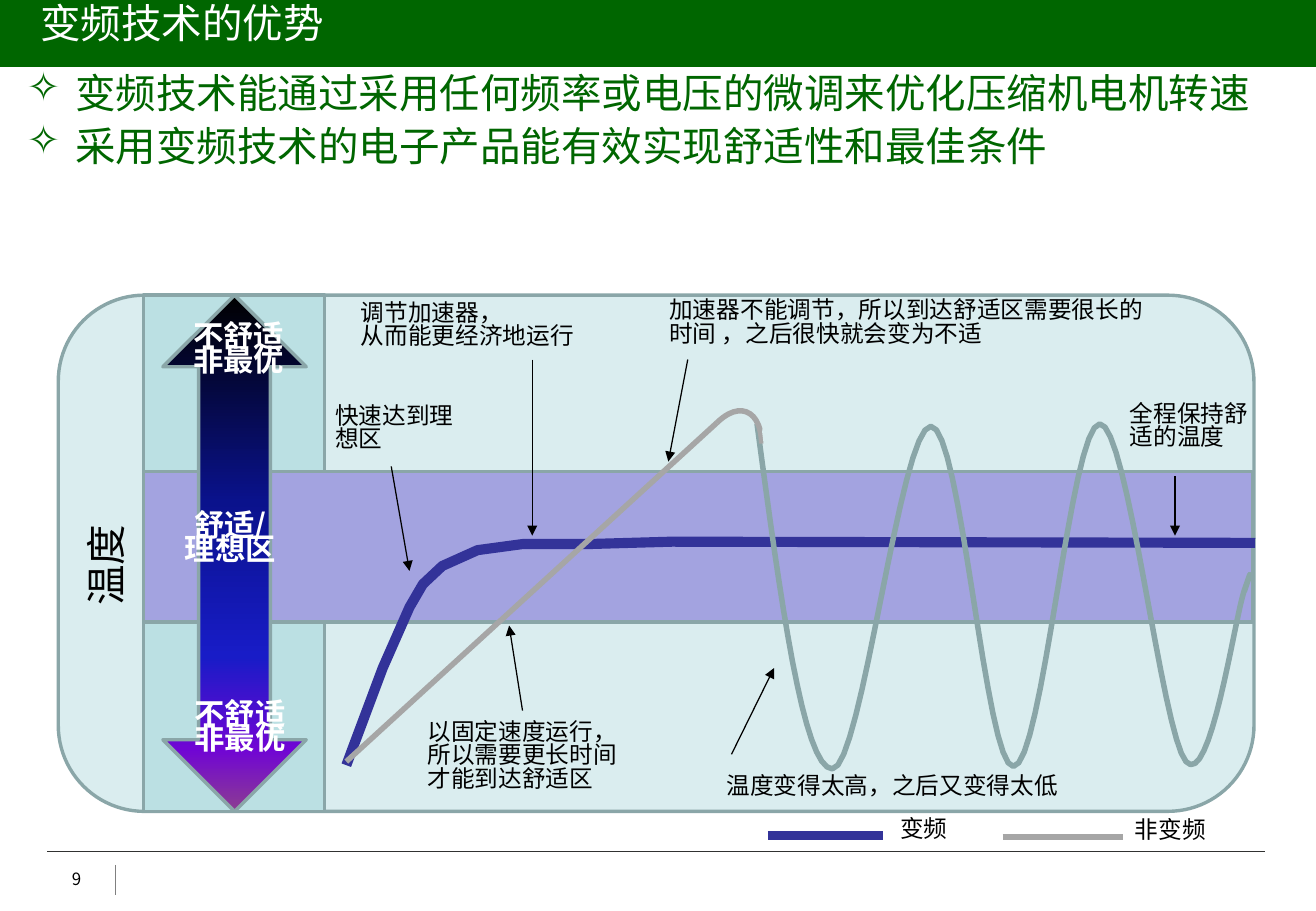
"""Build the slide on the advantages of variable-frequency technology."""
from dataclasses import dataclass

from lxml import etree
from pptx import Presentation
from pptx.dml.color import RGBColor
from pptx.enum.shapes import MSO_CONNECTOR, MSO_SHAPE
from pptx.enum.text import MSO_ANCHOR, PP_ALIGN
from pptx.oxml.ns import qn
from pptx.util import Inches, Pt

STRAIGHT = MSO_CONNECTOR.STRAIGHT
RECT, ROUNDED = MSO_SHAPE.RECTANGLE, MSO_SHAPE.ROUNDED_RECTANGLE
DOUBLE_ARROW, ARC = MSO_SHAPE.UP_DOWN_ARROW, MSO_SHAPE.ARC
PATCH = MSO_SHAPE.FLOWCHART_ALTERNATE_PROCESS
TOP, MIDDLE = MSO_ANCHOR.TOP, MSO_ANCHOR.MIDDLE
LEFT, CENTER = PP_ALIGN.LEFT, PP_ALIGN.CENTER


@dataclass(frozen=True)
class Theme:
    font: str = "Noto Sans CJK SC"
    number_font: str = "Noto Sans CJK JP"
    green: str = "006600"
    white: str = "FFFFFF"
    black: str = "000000"
    rule: str = "313231"
    divider: str = "808080"
    panel: str = "DAEDEF"
    column: str = "BBE0E3"
    comfort: str = "A3A3E0"
    outline: str = "8AA6A8"
    inverter: str = "333399"
    fixed: str = "A6A6A6"
    gradient: tuple = ((0, "000000"), (40, "0A128C"), (70, "181CC7"),
                       (88, "7005D4"), (100, "8C3D91"))
    heading: int = 24
    zone: int = 18
    note: int = 14
    number: int = 10
    spacing: float = 0.83


THEME = Theme()

TITLE = "变频技术的优势"
BULLETS = "变频技术能通过采用任何频率或电压的微调来优化压缩机电机转速\n采用变频技术的电子产品能有效实现舒适性和最佳条件"
AXIS_LABEL = "温度"
PAGE_NUMBER = "9"
LEGEND = [
    ("变频", (7.31, 6.69, 0.86, 0.34), (6.32, 6.88), (7.27, 6.88), THEME.inverter, 5),
    ("非变频", (9.24, 6.7, 1.29, 0.34), (8.25, 6.89), (9.24, 6.89), THEME.fixed, 3.5),
]
ZONES = [
    ("舒适/\n理想区", (1.1, 4.19, 1.59, 0.54)),
    ("不舒适\n非最优", (1.07, 2.63, 1.79, 0.54)),
    ("不舒适\n非最优", (1.08, 5.74, 1.79, 0.54)),
]
NOTES = [
    ("快速达到理想区", (2.66, 3.29, 1.27, 0.5), TOP, (3.22, 3.84), (3.37, 4.7)),
    ("调节加速器，\n从而能更经济地运行", (2.87, 2.44, 2.39, 0.5), TOP, (4.38, 2.96), (4.38, 4.41)),
    ("加速器不能调节，所以到达舒适区需要很长的时间 ，之后很快就会变为不适",
     (5.41, 2.42, 4.12, 0.5), TOP, (5.66, 2.96), (5.5, 3.8)),
    ("全程保持舒适的温度", (9.2, 3.16, 1.26, 0.71), MIDDLE, (9.67, 3.92), (9.67, 4.41)),
    ("以固定速度运行，所以需要更长时间才能到达舒适区",
     (3.42, 5.89, 1.92, 0.71), TOP, (4.3, 5.85), (4.19, 5.15)),
    ("温度变得太高，之后又变得太低", (5.88, 6.23, 3.24, 0.5), MIDDLE, (6.02, 6.21), (6.37, 5.5)),
]
INVERTER_CURVE = [(2.85, 6.3), (3.15, 5.5), (3.37, 5), (3.48, 4.81), (3.64, 4.66), (3.93, 4.53),
                  (4.3, 4.48), (4.84, 4.48), (5.53, 4.46), (10.33, 4.47)]
WAVE_START = (6.23, 3.49)
WAVE_CURVES = [
    ((6.42, 4.91), (6.61, 6.33), (6.85, 6.33)),
    ((7.09, 6.33), (7.41, 3.51), (7.66, 3.51)),
    ((7.91, 3.5), (8.11, 6.32), (8.34, 6.31)),
    ((8.58, 6.31), (8.81, 3.5), (9.05, 3.49)),
    ((9.28, 3.48), (9.56, 6.04), (9.76, 6.27)),
    ((9.96, 6.5), (10.16, 5.09), (10.24, 4.86)),
    ((10.32, 4.63), (10.28, 4.75), (10.24, 4.87)),
]
CURVE_STEPS = 16
PATCHES = [((6.16, 3.24, 0.3, 0.21), 46), ((6.24, 3.55, 0.3, 0.21), 83)]

prs = Presentation()
prs.slide_width, prs.slide_height = Inches(10.83), Inches(7.5)
slide = prs.slides.add_slide(prs.slide_layouts[6])
shapes = slide.shapes


def color(value):
    return RGBColor.from_string(value)


def add_text(text, box, size=THEME.note, ink=THEME.black, font=THEME.font, bold=False,
             align=LEFT, anchor=TOP, spacing=1, after=0, bullet=None, wrap=True,
             inset=0.1, vertical=None):
    frame = shapes.add_textbox(*map(Inches, box)).text_frame
    frame.word_wrap, frame.vertical_anchor = wrap, anchor
    frame.margin_left = Inches(inset)
    if vertical:
        frame._txBody.bodyPr.set("vert", vertical)
    for index, line in enumerate(text.split("\n")):
        paragraph = frame.add_paragraph() if index else frame.paragraphs[0]
        paragraph.alignment = align
        paragraph.line_spacing = round(spacing * THEME.spacing, 2)
        paragraph.space_after = Pt(after)
        if bullet:
            properties = paragraph._p.get_or_add_pPr()
            properties.set("marL", str(Inches(0.4)))
            properties.set("indent", str(Inches(-0.4)))
            etree.SubElement(properties, qn("a:buChar"), char=bullet)
        run = paragraph.add_run()
        run.text = line
        run.font.size, run.font.bold, run.font.name = Pt(size), bold, font
        run.font.color.rgb = color(ink)
        etree.SubElement(run._r.get_or_add_rPr(), qn("a:ea"), typeface=font)


def style(shape, fill=None, line=None, width=2):
    shape.shadow.inherit = False
    if fill:
        shape.fill.solid()
        shape.fill.fore_color.rgb = color(fill)
    else:
        shape.fill.background()
    if line:
        shape.line.color.rgb = color(line)
        shape.line.width = Pt(width)
    else:
        shape.line.fill.background()


def add_block(kind, box, fill=None, line=None, width=2, rotation=0):
    block = shapes.add_shape(kind, *map(Inches, box))
    style(block, fill, line, width)
    block.rotation = rotation
    return block


def add_line(start, end, ink=THEME.black, width=0.75, arrow=False):
    line = shapes.add_connector(STRAIGHT, *map(Inches, start + end))
    line.line.color.rgb = color(ink)
    line.line.width = Pt(width)
    if arrow:
        etree.SubElement(line.line._get_or_add_ln(), qn("a:tailEnd"), type="triangle")
    etree.SubElement(line._element.spPr, qn("a:effectLst"))


def add_curve(points, ink, width):
    start, *rest = [(Inches(x), Inches(y)) for x, y in points]
    builder = shapes.build_freeform(*start)
    builder.add_line_segments(rest, close=False)
    style(builder.convert_to_shape(), line=ink, width=width)


def bezier_points(start, curves):
    points = [start]
    for control_a, control_b, end in curves:
        corners = (points[-1], control_a, control_b, end)
        for step in range(1, CURVE_STEPS + 1):
            t = step / CURVE_STEPS
            weights = ((1 - t) ** 3, 3 * t * (1 - t) ** 2, 3 * t * t * (1 - t), t ** 3)
            points.append(tuple(sum(w * c[axis] for w, c in zip(weights, corners))
                                for axis in (0, 1)))
    return points


add_block(RECT, (0, 0, 10.83, 0.55), THEME.green)
add_line((0.39, 7.01), (10.41, 7.01), THEME.rule)
add_line((0.95, 7.12), (0.95, 7.37), THEME.divider)
add_text(PAGE_NUMBER, (0.36, 7.12, 0.54, 0.25), THEME.number, font=THEME.number_font,
         align=CENTER, anchor=MIDDLE, wrap=False)
add_text(TITLE, (0, 0, 10.81, 0.5), THEME.heading, THEME.white, inset=0.33)
add_text(BULLETS, (0.12, 0.59, 10.59, 1.76), THEME.heading, THEME.green,
         spacing=0.95, after=9, bullet="✧")

for label, box, start, end, ink, width in LEGEND:
    add_line(start, end, ink, width)
    add_text(label, box, wrap=False)

add_block(ROUNDED, (0.48, 2.43, 9.84, 4.25), THEME.panel, THEME.outline)
add_block(RECT, (1.18, 2.43, 1.49, 4.25), THEME.column, THEME.outline)
add_block(RECT, (1.18, 3.88, 9.13, 1.24), THEME.comfort, THEME.outline)
zone_arrow = add_block(DOUBLE_ARROW, (1.34, 2.43, 1.18, 4.25), line=THEME.outline)
zone_arrow.fill.gradient()
zone_arrow.fill.gradient_angle = 270
stops = zone_arrow._element.spPr.find(qn("a:gradFill")).find(qn("a:gsLst"))
stops.clear()
for percent, ink in THEME.gradient:
    stop = etree.SubElement(stops, qn("a:gs"), pos=str(percent * 1000))
    etree.SubElement(stop, qn("a:srgbClr"), val=ink)
add_text(AXIS_LABEL, (0.64, 3.86, 0.52, 1.59), THEME.heading, align=CENTER,
         anchor=MIDDLE, vertical="vert270")

add_curve(INVERTER_CURVE, THEME.inverter, 6)
add_curve(bezier_points(WAVE_START, WAVE_CURVES), THEME.outline, 3.25)
add_line((2.85, 6.27), (5.9, 3.48), THEME.fixed, 3.25)
peak = add_block(ARC, (5.71, 3.36, 0.52, 0.99), line=THEME.fixed, width=3.25, rotation=20.3)
peak.adjustments[0], peak.adjustments[1] = 143.45, 183.26
for box, rotation in PATCHES:
    add_block(PATCH, box, THEME.panel, rotation=rotation)

for label, box in ZONES:
    add_text(label, box, THEME.zone, THEME.white, bold=True, align=CENTER,
             anchor=MIDDLE, spacing=0.8)
for note, box, anchor, start, end in NOTES:
    add_text(note, box, anchor=anchor)
    add_line(start, end, arrow=True)

prs.save("out.pptx")
